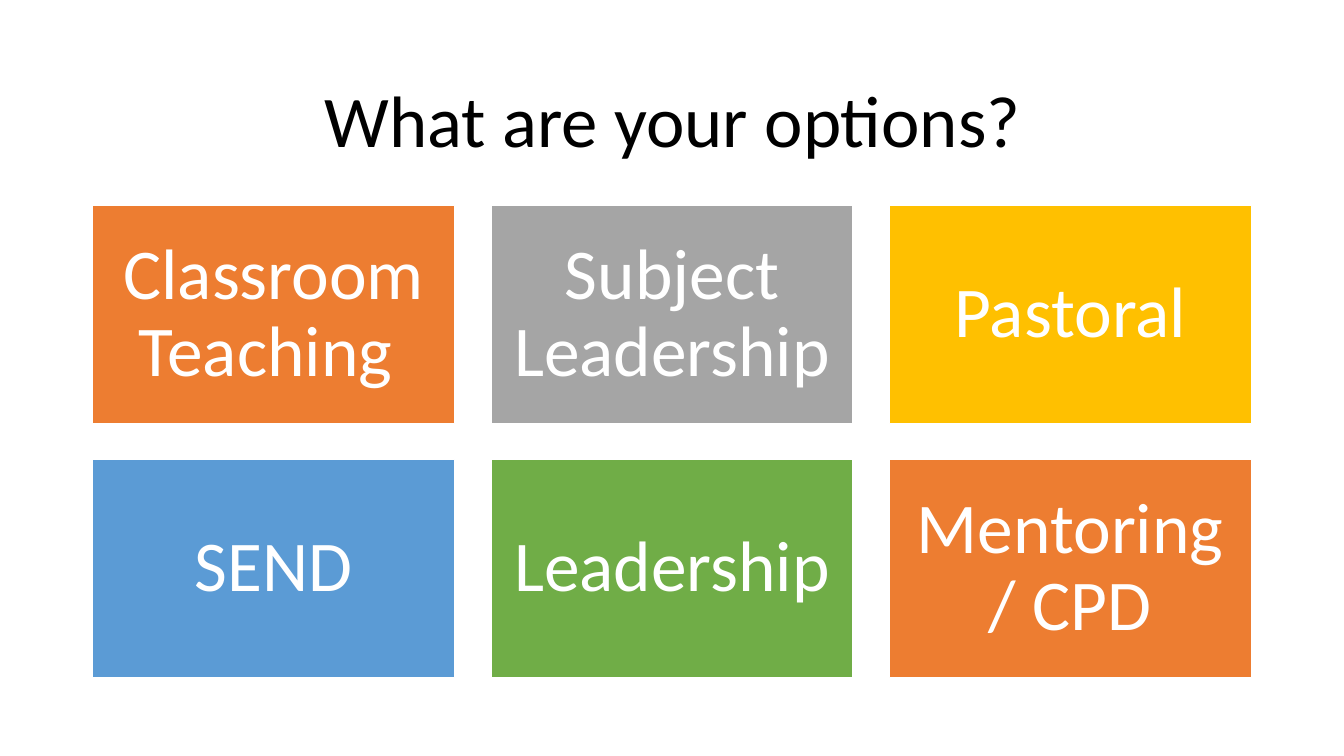
"""Build the slide of career options as a titled grid of coloured tiles."""
from dataclasses import dataclass

from pptx import Presentation
from pptx.dml.color import RGBColor
from pptx.enum.shapes import MSO_SHAPE
from pptx.enum.text import MSO_ANCHOR, MSO_AUTO_SIZE, PP_ALIGN
from pptx.slide import Slide
from pptx.text.text import TextFrame
from pptx.util import Inches, Pt


@dataclass(frozen=True)
class Theme:
    font: str = "Calibri"
    title_size: int = 52
    tile_size: int = 51
    black: str = "000000"
    white: str = "FFFFFF"
    orange: str = "ED7D31"
    grey: str = "A5A5A5"
    gold: str = "FFC000"
    blue: str = "5B9BD5"
    green: str = "70AD47"


@dataclass(frozen=True)
class Option:
    label: str
    color: str


THEME = Theme()
OPTIONS = [
    Option("Classroom Teaching ", THEME.orange),
    Option("Subject Leadership", THEME.grey),
    Option("Pastoral", THEME.gold),
    Option("SEND", THEME.blue),
    Option("Leadership", THEME.green),
    Option("Mentoring / CPD", THEME.orange),
]
COLUMNS = 3
LEFT, TOP = 0.92, 2.04
TILE_W, TILE_H, GAP = 3.59, 2.16, 0.36


def write_text(tf: TextFrame, text: str, *, size: int, color: str, inset: float) -> None:
    tf.word_wrap = True
    tf.auto_size = MSO_AUTO_SIZE.NONE
    tf.vertical_anchor = MSO_ANCHOR.MIDDLE
    tf.margin_left = tf.margin_right = Inches(inset)
    tf.margin_top = tf.margin_bottom = Inches(inset)
    p = tf.paragraphs[0]
    p.alignment = PP_ALIGN.CENTER
    p.line_spacing = 0.9
    r = p.add_run()
    r.text = text
    r.font.name = THEME.font
    r.font.size = Pt(size)
    r.font.color.rgb = RGBColor.from_string(color)


def add_title(s: Slide, text: str) -> None:
    sp = s.shapes.title
    sp.left, sp.top = Inches(LEFT), Inches(0.61)
    sp.width, sp.height = Inches(11.5), Inches(1.24)
    write_text(sp.text_frame, text, size=THEME.title_size, color=THEME.black, inset=0.1)


def add_tile(s: Slide, option: Option, row: int, column: int) -> None:
    sp = s.shapes.add_shape(
        MSO_SHAPE.RECTANGLE,
        Inches(LEFT + column * (TILE_W + GAP)),
        Inches(TOP + row * (TILE_H + GAP)),
        Inches(TILE_W),
        Inches(TILE_H),
    )
    sp.shadow.inherit = False
    sp.fill.solid()
    sp.fill.fore_color.rgb = RGBColor.from_string(option.color)
    sp.line.color.rgb = RGBColor.from_string(THEME.white)
    sp.line.width = Pt(1)
    write_text(sp.text_frame, option.label, size=THEME.tile_size, color=THEME.white, inset=0.21)


def main() -> None:
    prs = Presentation()
    prs.slide_width, prs.slide_height = Inches(13.33), Inches(7.5)
    s = prs.slides.add_slide(prs.slide_layouts[5])
    add_title(s, "What are your options?")
    for i, option in enumerate(OPTIONS):
        add_tile(s, option, *divmod(i, COLUMNS))
    prs.save("out.pptx")


if __name__ == "__main__":
    main()
